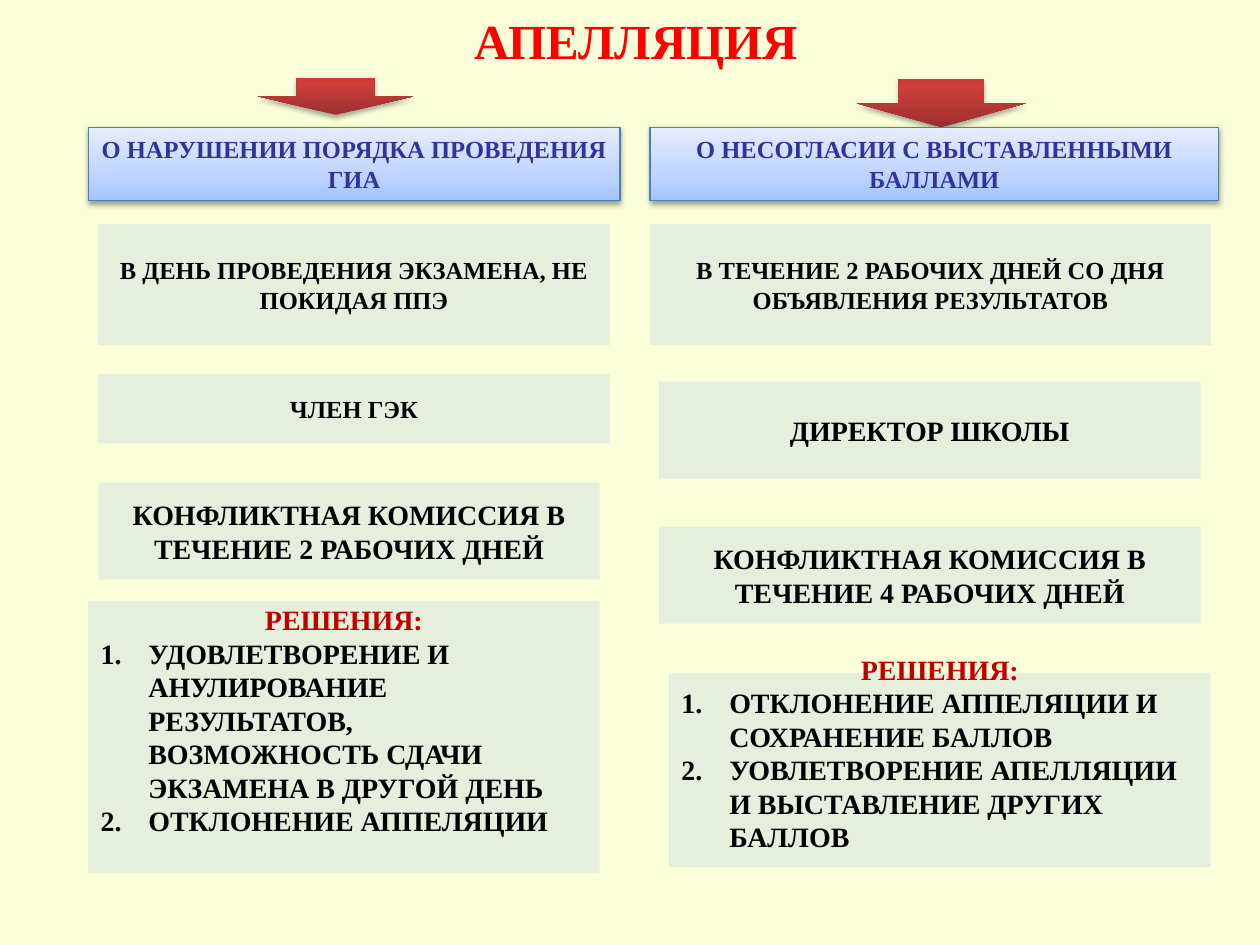
from lxml.etree import SubElement
from pptx import Presentation
from pptx.dml.color import RGBColor
from pptx.enum.shapes import MSO_SHAPE
from pptx.enum.text import MSO_ANCHOR, PP_ALIGN
from pptx.oxml.ns import qn
from pptx.util import Inches, Pt

# Content: each column runs from top to bottom
TITLE = "АПЕЛЛЯЦИЯ"
DECISIONS = "РЕШЕНИЯ:"
COLUMNS = [
    {
        "arrow": (2.05, 0.62, 1.23, 0.29),
        "header": ("О НАРУШЕНИИ ПОРЯДКА ПРОВЕДЕНИЯ ГИА", 0.7, 4.22),
        "steps": [  # text, size, place
            ("В ДЕНЬ ПРОВЕДЕНИЯ ЭКЗАМЕНА, НЕ ПОКИДАЯ ППЭ", 14, (0.78, 1.78, 4.06, 0.96)),
            ("ЧЛЕН ГЭК", 14, (0.78, 2.97, 4.06, 0.55)),
            ("КОНФЛИКТНАЯ КОМИССИЯ В ТЕЧЕНИЕ 2 РАБОЧИХ ДНЕЙ", 16, (0.78, 3.83, 3.98, 0.77)),
        ],
        "decisions": [
            "УДОВЛЕТВОРЕНИЕ И АНУЛИРОВАНИЕ РЕЗУЛЬТАТОВ, ВОЗМОЖНОСТЬ СДАЧИ ЭКЗАМЕНА В ДРУГОЙ ДЕНЬ",
            "ОТКЛОНЕНИЕ АППЕЛЯЦИИ",
        ],
        "decisions_place": (0.7, 4.77, 4.06, 2.16),
    },
    {
        "arrow": (6.8, 0.63, 1.34, 0.38),
        "header": ("О НЕСОГЛАСИИ С ВЫСТАВЛЕННЫМИ БАЛЛАМИ", 5.16, 4.51),
        "steps": [
            ("В ТЕЧЕНИЕ 2 РАБОЧИХ ДНЕЙ СО ДНЯ ОБЪЯВЛЕНИЯ РЕЗУЛЬТАТОВ", 14, (5.16, 1.78, 4.45, 0.96)),
            ("ДИРЕКТОР ШКОЛЫ", 16, (5.23, 3.03, 4.3, 0.77)),
            ("КОНФЛИКТНАЯ КОМИССИЯ В ТЕЧЕНИЕ 4 РАБОЧИХ ДНЕЙ", 16, (5.23, 4.18, 4.3, 0.77)),
        ],
        "decisions": [
            "ОТКЛОНЕНИЕ АППЕЛЯЦИИ И СОХРАНЕНИЕ БАЛЛОВ",
            "УОВЛЕТВОРЕНИЕ АПЕЛЛЯЦИИ И ВЫСТАВЛЕНИЕ ДРУГИХ БАЛЛОВ",
        ],
        "decisions_place": (5.31, 5.34, 4.3, 1.54),
    },
]
HEADER_TOP, HEADER_HEIGHT = 1.01, 0.58
RED_STOPS = [(0, "9C2F2D"), (80, "CB3E3A"), (100, "CE3B37")]
BLUE_STOPS = [(0, "A4C4FF"), (35, "BFD4FF"), (100, "E6EEFF")]


def color(value):
    return RGBColor.from_string(value)


def add_box(place, kind=MSO_SHAPE.RECTANGLE):
    box = page.shapes.add_shape(kind, *map(Inches, place))
    box.shadow.inherit = False
    box.line.fill.background()
    return box


def fill_gradient(box, stops):
    """Vertical gradient, from the bottom up."""
    box.fill.gradient()
    box.fill.gradient_angle = 90
    stop_list = box._element.spPr.find(".//" + qn("a:gsLst"))
    for stop in list(stop_list):
        stop_list.remove(stop)
    for position, value in stops:
        stop = SubElement(stop_list, qn("a:gs"), pos=str(position * 1000))
        SubElement(stop, qn("a:srgbClr"), val=value)


def add_shadow(box, opacity, distance):
    effects = box._element.spPr.find(qn("a:effectLst"))
    shadow = SubElement(effects, qn("a:outerShdw"), blurRad=str(Pt(3.1)),
                        dist=str(Pt(distance)), dir="5400000", rotWithShape="0")
    black = SubElement(shadow, qn("a:srgbClr"), val="000000")
    SubElement(black, qn("a:alpha"), val=str(opacity * 1000))


def fill_pale(box):
    box.fill.solid()
    box.fill.fore_color.rgb = color("B9CDE5")
    tint = box._element.spPr.find(qn("a:solidFill"))[0]
    SubElement(tint, qn("a:alpha"), val="31000")


def write(box, lines, size):
    """Lines are (text, colour, numbered)."""
    frame = box.text_frame
    frame.word_wrap = True
    frame.vertical_anchor = MSO_ANCHOR.MIDDLE
    for index, (text, value, numbered) in enumerate(lines):
        para = frame.add_paragraph() if index else frame.paragraphs[0]
        para.alignment = PP_ALIGN.LEFT if numbered else PP_ALIGN.CENTER
        if numbered:
            props = para._p.get_or_add_pPr()
            props.set("marL", str(Inches(0.38)))
            props.set("indent", str(-Inches(0.38)))
            SubElement(props, qn("a:buFont"), typeface="+mj-lt")
            SubElement(props, qn("a:buAutoNum"), type="arabicPeriod")
        span = para.add_run()
        span.text = text
        span.font.color.rgb = color(value)
        for name, setting in {"name": "Times New Roman", "size": Pt(size), "bold": True}.items():
            setattr(span.font, name, setting)


deck = Presentation()
deck.slide_width, deck.slide_height = Inches(10), Inches(7.5)
page = deck.slides.add_slide(deck.slide_layouts[6])
page.background.fill.solid()
page.background.fill.fore_color.rgb = color("FAFFD9")

# Title
title = page.shapes.add_textbox(*map(Inches, (0.55, 0, 9, 0.64)))
write(title, [(TITLE, "FF0000", False)], 28)

for column in COLUMNS:
    # Arrow
    arrow = add_box(column["arrow"], MSO_SHAPE.DOWN_ARROW)
    fill_gradient(arrow, RED_STOPS)
    add_shadow(arrow, 35, 1.8)

    # Header
    text, left, width = column["header"]
    header = add_box((left, HEADER_TOP, width, HEADER_HEIGHT))
    fill_gradient(header, BLUE_STOPS)
    header.line.color.rgb = color("4B7EBC")
    header.line.width = Pt(0.75)
    add_shadow(header, 38, 1.6)
    write(header, [(text, "333399", False)], 14)

    # Steps
    for text, size, place in column["steps"]:
        step = add_box(place)
        fill_pale(step)
        write(step, [(text, "000000", False)], size)

    # Decisions, raised by one line of text
    decisions = add_box(column["decisions_place"])
    fill_pale(decisions)
    decisions.text_frame.margin_bottom = Inches(0.32)
    numbered = [(text, "000000", True) for text in column["decisions"]]
    write(decisions, [(DECISIONS, "C00000", False)] + numbered, 16)

deck.save("out.pptx")
